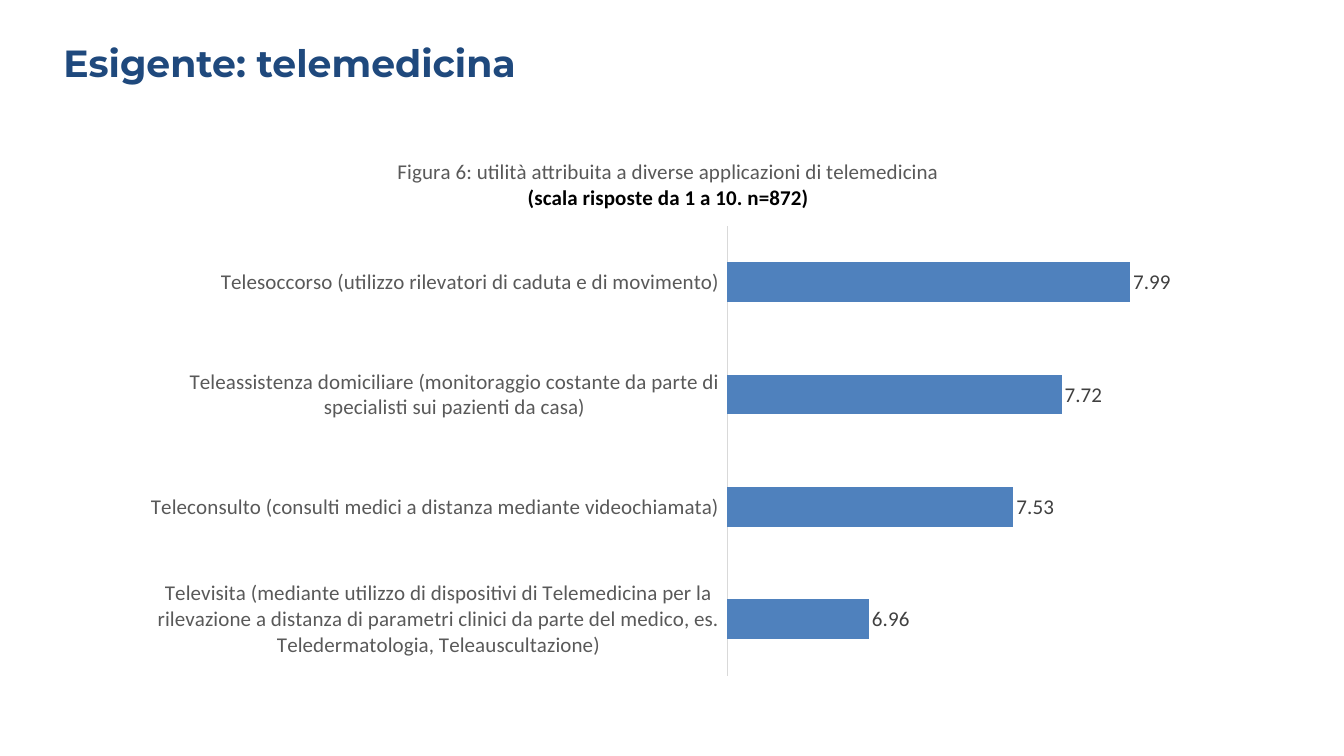
from lxml import etree
from pptx import Presentation
from pptx.chart.data import CategoryChartData
from pptx.dml.color import RGBColor
from pptx.enum.chart import XL_CHART_TYPE, XL_LABEL_POSITION, XL_TICK_LABEL_POSITION, XL_TICK_MARK
from pptx.oxml.ns import qn
from pptx.util import Inches, Pt

NAVY = RGBColor(0x1F, 0x49, 0x7D)
BLUE = RGBColor(0x4F, 0x81, 0xBD)
BLACK = RGBColor(0, 0, 0)
DARK_GRAY = RGBColor(0x40, 0x40, 0x40)
GRAY = RGBColor(0x59, 0x59, 0x59)
LIGHT_GRAY = RGBColor(0xD9, 0xD9, 0xD9)
NUMBER_FORMAT = "###0.00"

USEFULNESS = [
    ("Televisita (mediante utilizzo di dispositivi di Telemedicina per la rilevazione a distanza "
     "di parametri clinici da parte del medico, es. Teledermatologia, Teleauscultazione)", 6.96),
    ("Teleconsulto (consulti medici a distanza mediante videochiamata)", 7.53),
    ("Teleassistenza domiciliare (monitoraggio costante da parte di specialisti sui pazienti "
     "da casa)", 7.72),
    ("Telesoccorso (utilizzo rilevatori di caduta e di movimento)", 7.99),
]
CHART_TITLE = [
    ("Figura 6: utilità attribuita a diverse applicazioni di telemedicina", GRAY, False),
    ("(scala risposte da 1 a 10. n=872)", BLACK, True),
]


def style_font(font, name, size, color, bold=False):
    font.name = name
    font.size = Pt(size)
    font.color.rgb = color
    font.bold = bold


def add_heading(slide, left, top, width, height):
    text_frame = slide.shapes.add_textbox(left, top, width, height).text_frame
    text_frame.word_wrap = True
    paragraph = text_frame.paragraphs[0]
    paragraph.text = "Esigente: telemedicina"
    style_font(paragraph.font, "Montserrat", 36, NAVY, bold=True)


def add_chart_title(chart):
    text_frame = chart.chart_title.text_frame
    for index, (text, color, bold) in enumerate(CHART_TITLE):
        paragraph = text_frame.add_paragraph() if index else text_frame.paragraphs[0]
        run = paragraph.add_run()
        run.text = text
        style_font(run.font, "Calibri", 20, color, bold)
    chart.chart_title.include_in_layout = False


def set_plot_area(chart, **fractions):
    """Place the inner plot area by fractions x, y, w and h of the chart."""
    plot_area = chart.plots[0]._element.getparent()
    layout = plot_area.find(qn("c:layout"))
    if layout is None:
        layout = etree.Element(qn("c:layout"))
        plot_area.insert(0, layout)
    manual = etree.SubElement(layout, qn("c:manualLayout"))
    settings = [("layoutTarget", "inner"), ("xMode", "edge"), ("yMode", "edge")]
    for tag, value in settings + list(fractions.items()):
        etree.SubElement(manual, qn(f"c:{tag}")).set("val", str(value))


def add_usefulness_chart(slide, left, top, width, height):
    data = CategoryChartData(number_format=NUMBER_FORMAT)
    data.categories = [name for name, _ in USEFULNESS]
    data.add_series("Series 1", [value for _, value in USEFULNESS])
    chart = slide.shapes.add_chart(
        XL_CHART_TYPE.BAR_CLUSTERED, left, top, width, height, data).chart
    style_font(chart.font, "Calibri", 10, BLACK)
    chart.has_legend = False
    add_chart_title(chart)
    set_plot_area(chart, x=0.555, y=0.156, w=0.427, h=0.823)

    category_axis = chart.category_axis
    category_axis.major_tick_mark = XL_TICK_MARK.NONE
    category_axis.tick_label_position = XL_TICK_LABEL_POSITION.LOW
    category_axis.format.line.color.rgb = LIGHT_GRAY
    category_axis.format.line.width = Pt(0.75)
    style_font(category_axis.tick_labels.font, "Calibri", 20, GRAY)

    value_axis = chart.value_axis
    value_axis.minimum_scale = 6.4
    value_axis.maximum_scale = 8.2
    value_axis.has_major_gridlines = False
    value_axis.visible = False

    plot = chart.plots[0]
    plot.gap_width = 182
    plot.vary_by_categories = False
    fill = plot.series[0].format.fill
    fill.solid()
    fill.fore_color.rgb = BLUE

    plot.has_data_labels = True
    labels = plot.data_labels
    labels.show_value = True
    labels.number_format = NUMBER_FORMAT
    labels.number_format_is_linked = False
    labels.position = XL_LABEL_POSITION.OUTSIDE_END
    style_font(labels.font, "Calibri", 20, DARK_GRAY)


def main():
    presentation = Presentation()
    presentation.slide_width = Inches(17.78)
    presentation.slide_height = Inches(10)
    slide = presentation.slides.add_slide(presentation.slide_layouts[6])
    add_heading(slide, Inches(0.74), Inches(0.47), Inches(15.16), Inches(0.71))
    add_usefulness_chart(slide, Inches(1.77), Inches(1.86), Inches(14.14), Inches(7.23))
    presentation.save("out.pptx")


if __name__ == "__main__":
    main()
